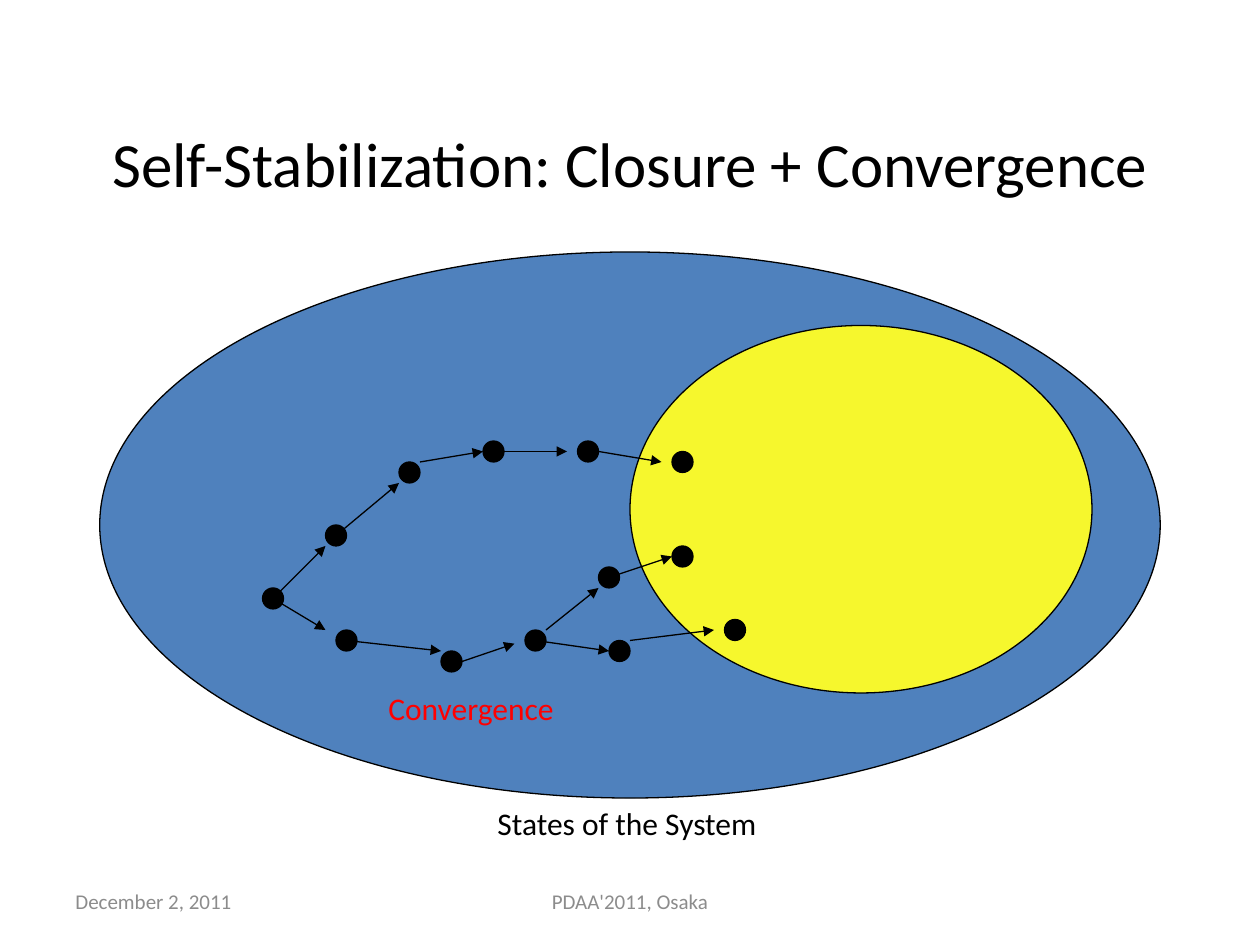
import pptx
import pptx.dml.color
import pptx.enum.shapes
import pptx.enum.text
import pptx.oxml.ns
import pptx.util
import lxml.etree

SCALE = 914400 // 120  # EMU per px, 120 px to the inch
BLACK = pptx.dml.color.RGBColor(0x00, 0x00, 0x00)
GREY = pptx.dml.color.RGBColor(0x8C, 0x8C, 0x8C)
RED = pptx.dml.color.RGBColor(0xFF, 0x00, 0x00)
BLUE = pptx.dml.color.RGBColor(0x4F, 0x81, 0xBD)
YELLOW = pptx.dml.color.RGBColor(0xF6, 0xF7, 0x2D)

Shape = pptx.enum.shapes.MSO_SHAPE
Align = pptx.enum.text.PP_ALIGN
Anchor = pptx.enum.text.MSO_ANCHOR

# Centres of the states, and start and end of each transition
STATES = [
    (260, 570), (320, 510), (390, 450), (470, 430), (560, 430), (650, 440),
    (330, 610), (430, 630), (510, 610), (580, 550), (650, 530),
    (590, 620), (700, 600),
]
TRANSITIONS = [
    (260, 570, 310, 520), (320, 510, 380, 460), (400, 440, 460, 430),
    (470, 430, 540, 430), (570, 430, 630, 440),
    (260, 570, 310, 600), (330, 610, 420, 620), (440, 630, 490, 613),
    (520, 600, 570, 560), (580, 550, 640, 530),
    (510, 610, 580, 620), (600, 610, 680, 600),
]
STATE_RADIUS = 10


def px(*lengths):
    return [pptx.util.Emu(length * SCALE) for length in lengths]


def write_text(text_frame, text, size=18, color=BLACK, align=Align.LEFT,
               anchor=Anchor.TOP, font="Calibri"):
    text_frame.word_wrap = True
    text_frame.vertical_anchor = anchor
    paragraph = text_frame.paragraphs[0]
    paragraph.alignment = align
    run = paragraph.add_run()
    run.text = text
    run.font.name = font
    run.font.size = pptx.util.Pt(size)
    run.font.color.rgb = color


class SlideBuilder:
    line_color = BLACK
    line_width = pptx.util.Pt(0.75)

    def __init__(self, slide):
        self.slide = slide

    def title(self, text, left, top, width, height):
        shape = self.slide.shapes.title
        shape.left, shape.top, shape.width, shape.height = px(left, top, width, height)
        write_text(shape.text_frame, text, size=36, align=Align.CENTER,
                   anchor=Anchor.MIDDLE)

    def label(self, text, left, top, width, height, **text_format):
        shape = self.slide.shapes.add_textbox(*px(left, top, width, height))
        write_text(shape.text_frame, text, **text_format)

    def shape(self, kind, left, top, width, height, fill):
        shape = self.slide.shapes.add_shape(kind, *px(left, top, width, height))
        shape.shadow.inherit = False
        shape.fill.solid()
        shape.fill.fore_color.rgb = fill
        shape.line.color.rgb = self.line_color
        shape.line.width = self.line_width

    def state(self, x, y):
        self.shape(Shape.FLOWCHART_CONNECTOR, x - STATE_RADIUS, y - STATE_RADIUS,
                   2 * STATE_RADIUS, 2 * STATE_RADIUS, BLACK)

    def arrow(self, *ends):
        connector = self.slide.shapes.add_connector(
            pptx.enum.shapes.MSO_CONNECTOR.STRAIGHT, *px(*ends))
        connector.line.color.rgb = self.line_color
        connector.line.width = self.line_width
        qn = pptx.oxml.ns.qn
        properties = connector.element.find(qn("p:spPr"))
        line = properties.find(qn("a:ln"))
        lxml.etree.SubElement(line, qn("a:tailEnd"), type="triangle")
        lxml.etree.SubElement(properties, qn("a:effectLst"))


def main():
    presentation = pptx.Presentation()
    presentation.slide_width, presentation.slide_height = px(1200, 900)
    builder = SlideBuilder(
        presentation.slides.add_slide(presentation.slide_layouts[5]))

    # Footer and title
    builder.label("December 2, 2011", 60, 834, 280, 48, size=12, color=GREY,
                  anchor=Anchor.MIDDLE)
    builder.label("PDAA'2011, Osaka", 410, 834, 380, 48, size=12, color=GREY,
                  align=Align.CENTER, anchor=Anchor.MIDDLE)
    builder.title("Self-Stabilization: Closure + Convergence", 20, 80, 1160, 150)

    # All states, and the legitimate ones inside
    builder.shape(Shape.OVAL, 95, 240, 1010, 520, BLUE)
    builder.label("States of the System ", 312, 760, 577, 60, align=Align.CENTER)
    builder.shape(Shape.OVAL, 600, 310, 440, 350, YELLOW)

    # Executions converging
    for state in STATES:
        builder.state(*state)
    for transition in TRANSITIONS:
        builder.arrow(*transition)
    builder.label("Convergence", 358, 650, 262, 60, color=RED)

    presentation.save("out.pptx")


if __name__ == "__main__":
    main()
